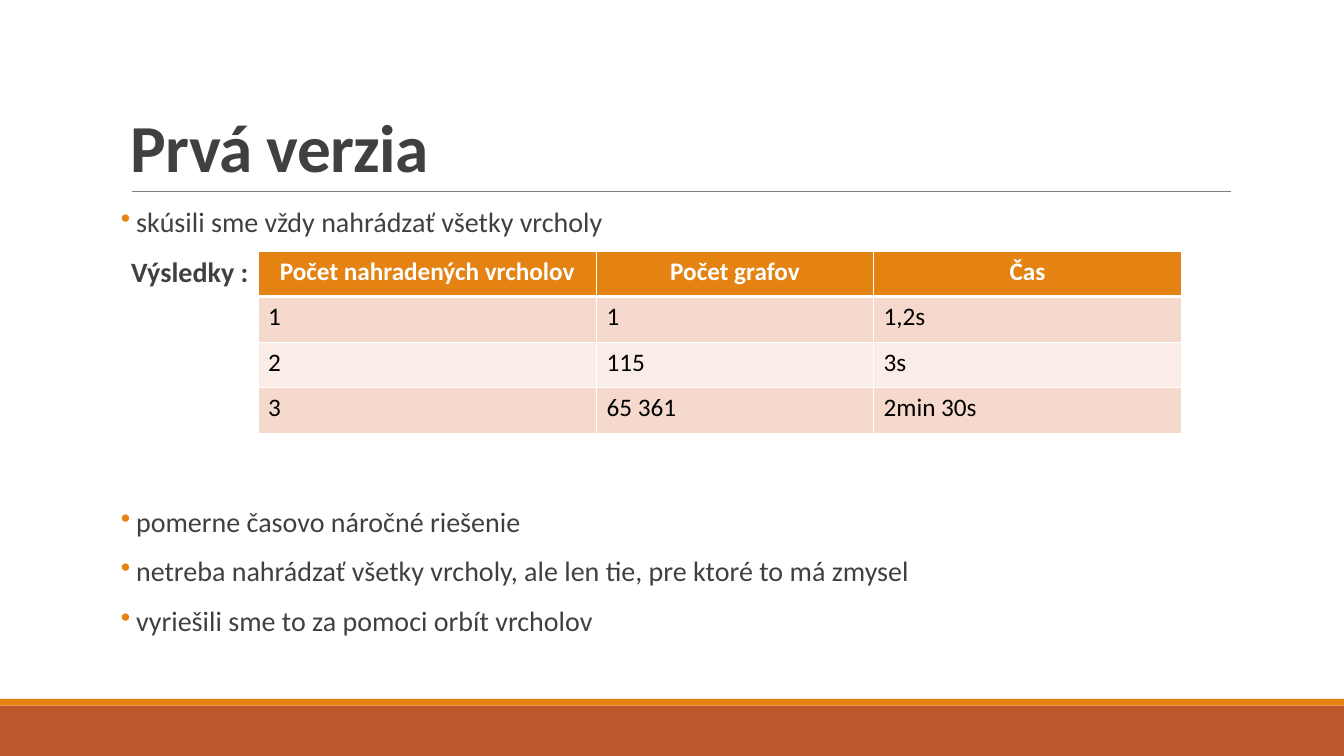
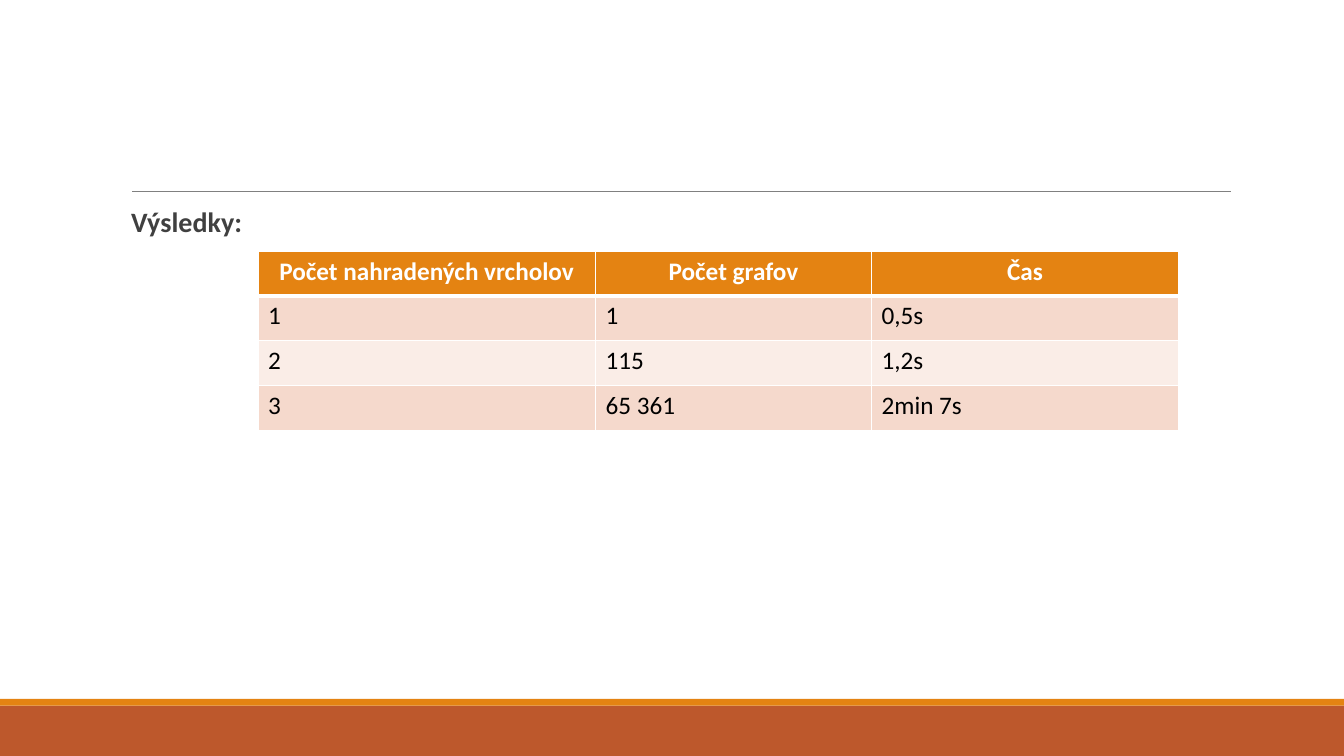
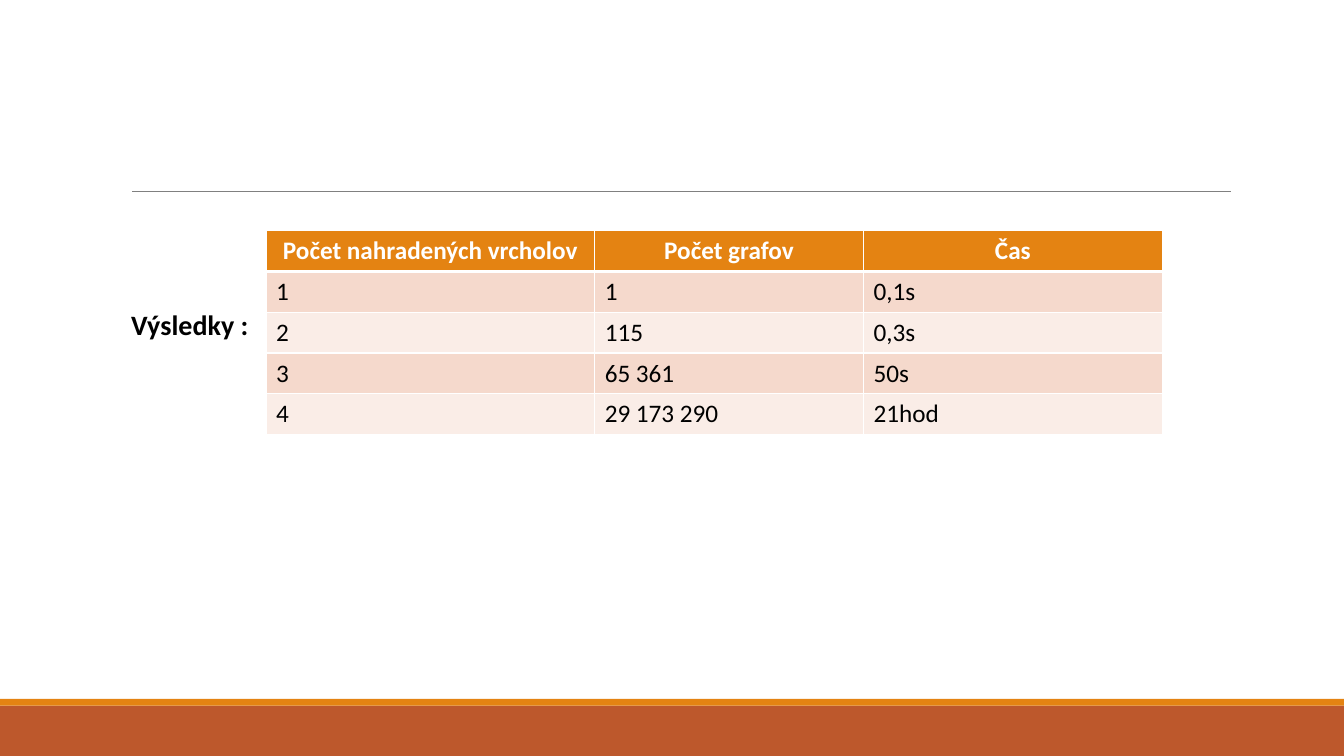
from dataclasses import dataclass

from lxml import etree
from pptx import Presentation
from pptx.dml.color import RGBColor
from pptx.enum.shapes import MSO_CONNECTOR, MSO_SHAPE
from pptx.enum.text import MSO_ANCHOR, PP_ALIGN
from pptx.oxml.ns import qn
from pptx.util import Inches, Pt

RECTANGLE = MSO_SHAPE.RECTANGLE
STRAIGHT = MSO_CONNECTOR.STRAIGHT
TOP, BOTTOM = MSO_ANCHOR.TOP, MSO_ANCHOR.BOTTOM
LEFT, CENTER = PP_ALIGN.LEFT, PP_ALIGN.CENTER

# Grid: 40 columns by 30 rows over the slide
SLIDE_WIDTH, SLIDE_HEIGHT = Inches(13.33), Inches(7.5)
COLUMNS, ROWS = 40, 30
BODY_LEFT, BODY_WIDTH, BODY_TOP = 3.6, 33, 8.08
LINE_PITCH = 1.98
COLUMN_SHARES = (11, 9, 10)
HEADINGS = ("Počet nahradených vrcholov", "Počet grafov", "Čas")


@dataclass(frozen=True)
class Theme:
    font: str = "Calibri"
    title_size: int = 48
    body_size: int = 20
    table_size: int = 18
    text: str = "404040"
    black: str = "000000"
    white: str = "FFFFFF"
    accent: str = "E48312"
    band: str = "BD582C"
    rule: str = "808080"
    stripes: tuple = ("F5D9CC", "FAEDE7")


def column(count):
    return round(SLIDE_WIDTH * count / COLUMNS)


def row(count):
    return round(SLIDE_HEIGHT * count / ROWS)


class SlideWriter:
    def __init__(self, deck, theme):
        self.deck = deck
        self.theme = theme
        self.slide = None

    def new_slide(self):
        """Start a blank slide with the shared bands and rule."""
        self.slide = self.deck.slides.add_slide(self.deck.slide_layouts[6])
        self.band(28, 2, self.theme.band)
        self.band(27.73, 0.27, self.theme.accent)
        self.rule(3.93, 36.63, 7.6)

    def band(self, top, height, color):
        band = self.slide.shapes.add_shape(
            RECTANGLE, 0, row(top), SLIDE_WIDTH, row(height))
        band.shadow.inherit = False
        band.fill.solid()
        band.fill.fore_color.rgb = RGBColor.from_string(color)
        band.line.fill.background()

    def rule(self, start, end, top):
        line = self.slide.shapes.add_connector(
            STRAIGHT, column(start), row(top), column(end), row(top))
        line.line.color.rgb = RGBColor.from_string(self.theme.rule)
        line.line.width = Pt(0.5)
        etree.SubElement(line._element.spPr, qn("a:effectLst"))

    def style(self, para, size, color, bold=False, align=LEFT):
        para.alignment = align
        para.font.name = self.theme.font
        para.font.size = Pt(size)
        para.font.bold = bold
        para.font.color.rgb = RGBColor.from_string(color)

    def text_frame(self, top, height, anchor, side_inset):
        box = self.slide.shapes.add_textbox(
            column(BODY_LEFT), row(top), column(BODY_WIDTH), row(height))
        frame = box.text_frame
        frame.word_wrap = True
        frame.vertical_anchor = anchor
        frame.margin_left = frame.margin_right = Inches(side_inset)
        return frame

    def title(self, text):
        para = self.text_frame(1.24, 6.36, BOTTOM, 0.1).paragraphs[0]
        span = para.add_run()
        span.text = text
        self.style(para, self.theme.title_size, self.theme.text, bold=True)
        para.line_spacing = 0.85
        span.font._element.set("spc", "-50")

    def body(self, line, texts, bullet=True, color=None):
        """Write paragraphs from the given body line downwards."""
        frame = self.text_frame(BODY_TOP + line * LINE_PITCH,
                                len(texts) * LINE_PITCH, TOP, 0)
        for index, text in enumerate(texts):
            para = frame.add_paragraph() if index else frame.paragraphs[0]
            para.text = text
            self.style(para, self.theme.body_size, color or self.theme.text,
                       bold=not bullet)
            para.line_spacing = 0.9
            para.space_before, para.space_after = Pt(12), Pt(2)
            self.indent(para, bullet)

    def indent(self, para, bullet):
        properties = para._p.get_or_add_pPr()
        if not bullet:
            properties.set("marL", str(Inches(0.1)))
            return
        properties.set("marL", str(Inches(0.15)))
        properties.set("indent", str(-Inches(0.15)))
        bullet_color = etree.SubElement(properties, qn("a:buClr"))
        etree.SubElement(bullet_color, qn("a:srgbClr"), val=self.theme.accent)
        etree.SubElement(properties, qn("a:buChar"), char="•")
        # The default run style comes after the bullet in the schema
        properties.append(properties.find(qn("a:defRPr")))

    def results(self, left, top, width, height, records):
        lines = (HEADINGS, *records)
        table = self.slide.shapes.add_table(
            len(lines), len(HEADINGS), column(left), row(top),
            column(width), row(height)).table
        for table_column, share in zip(table.columns, COLUMN_SHARES):
            table_column.width = column(width * share / sum(COLUMN_SHARES))
        for row_index, values in enumerate(lines):
            for column_index, value in enumerate(values):
                self.cell(table.cell(row_index, column_index), value, row_index)

    def cell(self, cell, value, row_index):
        header = row_index == 0
        self.borders(cell, top=3 if row_index == 1 else 1,
                     bottom=3 if header else 1)
        fill = self.theme.accent if header else self.theme.stripes[(row_index - 1) % 2]
        cell.fill.solid()
        cell.fill.fore_color.rgb = RGBColor.from_string(fill)
        para = cell.text_frame.paragraphs[0]
        para.text = value
        self.style(para, self.theme.table_size,
                   self.theme.white if header else self.theme.black,
                   bold=header, align=CENTER if header else LEFT)

    def borders(self, cell, top, bottom):
        properties = cell._tc.get_or_add_tcPr()
        for side, width in (("L", 1), ("R", 1), ("T", top), ("B", bottom)):
            edge = etree.SubElement(properties, qn(f"a:ln{side}"), w=str(Pt(width)))
            fill = etree.SubElement(edge, qn("a:solidFill"))
            etree.SubElement(fill, qn("a:srgbClr"), val=self.theme.white)


def main():
    deck = Presentation()
    deck.slide_width, deck.slide_height = SLIDE_WIDTH, SLIDE_HEIGHT
    theme = Theme()
    writer = SlideWriter(deck, theme)

    # First version
    writer.new_slide()
    writer.title("Prvá verzia")
    writer.body(0, ["skúsili sme vždy nahrádzať všetky vrcholy"])
    writer.body(1, ["Výsledky :"], bullet=False)
    writer.body(6, [
        "pomerne časovo náročné riešenie",
        "netreba nahrádzať všetky vrcholy, ale len tie, pre ktoré to má zmysel",
        "vyriešili sme to za pomoci orbít vrcholov",
    ])
    writer.results(7.68, 9.96, 27.48, 7.24, [
        ("1", "1", "1,2s"),
        ("2", "115", "3s"),
        ("3", "65 361", "2min 30s"),
    ])

    # Second set of results
    writer.new_slide()
    writer.body(0, ["Výsledky:"], bullet=False)
    writer.results(7.68, 9.96, 27.39, 7.12, [
        ("1", "1", "0,5s"),
        ("2", "115", "1,2s"),
        ("3", "65 361", "2min 7s"),
    ])

    # Third set of results
    writer.new_slide()
    writer.body(2.06, ["Výsledky :"], bullet=False, color=theme.black)
    writer.results(7.92, 9.16, 26.67, 8.08, [
        ("1", "1", "0,1s"),
        ("2", "115", "0,3s"),
        ("3", "65 361", "50s"),
        ("4", "29 173 290", "21hod"),
    ])

    deck.save("out.pptx")


if __name__ == "__main__":
    main()
